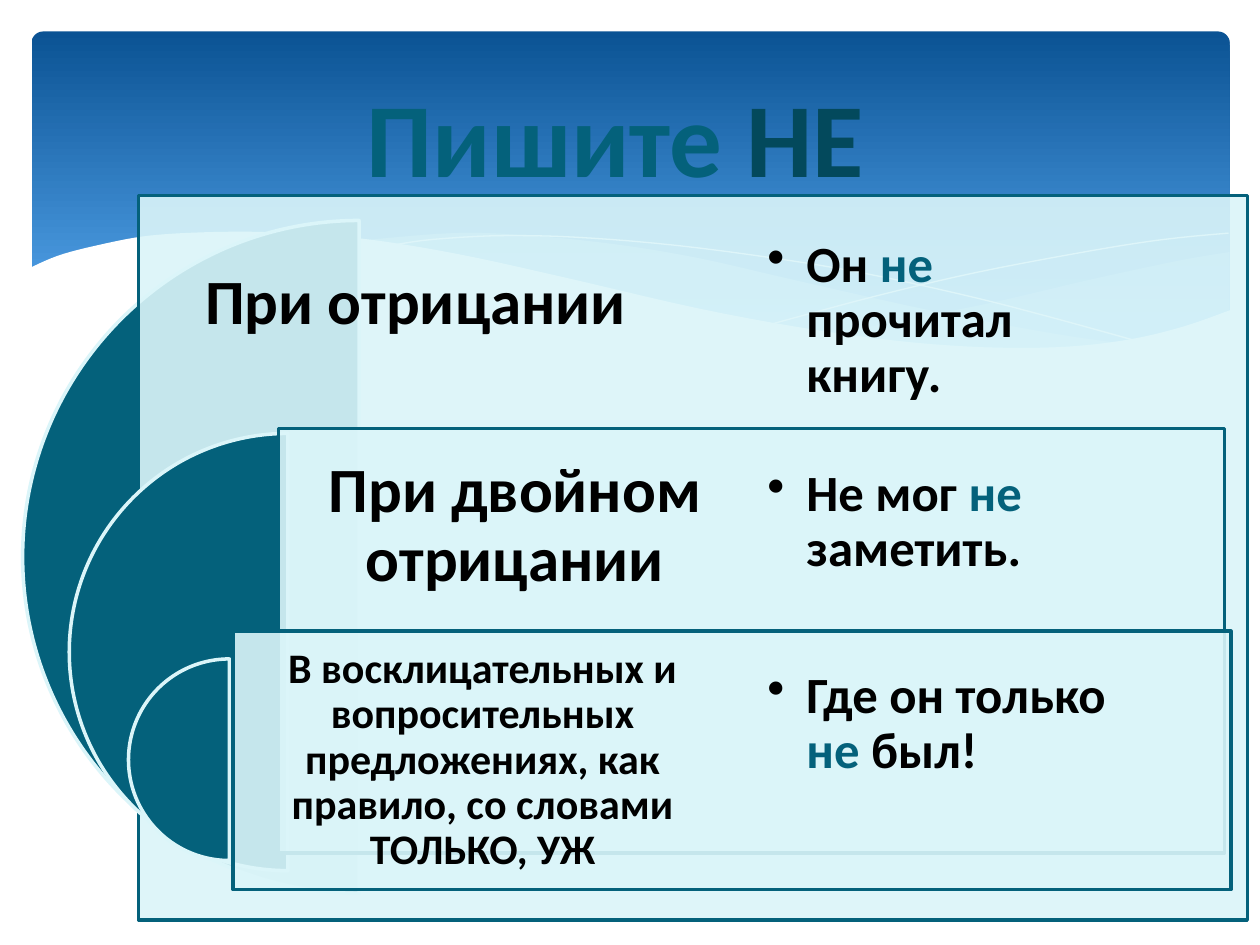
from pptx import Presentation
from pptx.dml.color import RGBColor
from pptx.enum.shapes import MSO_SHAPE
from pptx.enum.text import MSO_ANCHOR, PP_ALIGN
from pptx.oxml.ns import qn
from pptx.util import Inches, Pt
from lxml.etree import SubElement

TEAL = RGBColor(0x04, 0x61, 0x7B)
DARK_TEAL = RGBColor(0x03, 0x49, 0x5C)
PALE = RGBColor(0xDB, 0xF5, 0xF9)
BLACK = RGBColor(0, 0, 0)
WHITE = RGBColor(0xFF, 0xFF, 0xFF)
BANNER_TOP = RGBColor(0x0B, 0x53, 0x94)
BANNER_BOTTOM = RGBColor(0x59, 0xAA, 0xF2)
FONT = "Calibri"

# Content: words as (text, colour) pairs
TITLE = [("Пишите ", TEAL), ("НЕ", DARK_TEAL)]
RULES = [
    {"label": "При отрицании", "size": 36, "inset": 0.15,
     "pie": (0.18, 1.75, 5.34), "panel": (1.1, 1.55, 8.8, 5.75), "label_height": 1.72,
     "example": [("Он", BLACK), (" не ", TEAL), ("прочитал книгу.", BLACK)]},
    {"label": "При двойном отрицании", "size": 36, "inset": 0.15,
     "pie": (0.55, 3.44, 3.47), "panel": (2.21, 3.4, 7.51, 3.37), "label_height": 1.56,
     "example": [("Не мог ", BLACK), ("не", TEAL), (" заметить.", BLACK)]},
    {"label": "В восклицательных и вопросительных предложениях, "
              "как правило, со словами ТОЛЬКО, УЖ", "size": 24, "inset": 0.1,
     "pie": (1.02, 5.23, 1.6), "panel": (1.85, 5.01, 7.92, 2.05), "label_height": 2.05,
     "example": [("Где он только ", BLACK), ("не", TEAL), (" был!", BLACK)]},
]
EXAMPLE_LEFT, EXAMPLE_TOP, EXAMPLE_WIDTH, EXAMPLE_HEIGHT = 5.97, 1.75, 3.11, 1.6
COLUMN_SPLIT = 0.5  # share of a panel's width taken by its label

# Banner waves: each is a list of curves, joined by straight edges
RIGHT_WAVE = [
    [(9.76, 2), (9.35, 2.07), (8.61, 2.23), (7.79, 2.42), (6.61, 2.65)],
    [(6.61, 2.65), (7.19, 2.72), (7.69, 2.77), (8.24, 2.77), (8.72, 2.74),
     (9.21, 2.65), (9.49, 2.57), (9.76, 2.47)],
]
MIDDLE_WAVE = [
    [(8.93, 2.73), (8.37, 2.65), (7.41, 2.47), (6.29, 2.22), (5.55, 2.05),
     (4.89, 1.94), (4.2, 1.87), (3.61, 1.85), (2.86, 1.91)],
    [(2.86, 1.91), (3.62, 2.03), (4.49, 2.22), (5.66, 2.48), (6.5, 2.64),
     (7.22, 2.74), (7.85, 2.78), (8.38, 2.78), (8.93, 2.73)],
]
FRONT_WAVE = [
    [(9.77, 2.46), (9.4, 2.59), (8.99, 2.69), (8.5, 2.75), (7.93, 2.76), (7.26, 2.72),
     (6.48, 2.62), (5.55, 2.45), (4.47, 2.2), (3.65, 2.02), (2.92, 1.9), (2.3, 1.85),
     (1.77, 1.84), (1.19, 1.87), (0.76, 1.95), (0.46, 2.03), (0.23, 2.13)],
    [(0.23, 3.29), (9.77, 3.29)],
]
FALLING_LINE = [[(3.09, 1.95), (3.44, 1.9), (4.01, 1.87), (4.69, 1.89), (5.56, 1.97),
                 (6.65, 2.13), (7.6, 2.33), (8.31, 2.51), (9.07, 2.72)]]
RISING_LINE = [[(6.13, 2.57), (6.95, 2.35), (7.76, 2.16), (8.66, 1.99),
                (9.24, 1.9), (9.75, 1.85)]]


def smooth(points, steps=5):
    """Catmull-Rom curve through the points."""
    padded = [points[0], *points, points[-1]]
    curve = [points[0]]
    for a, b, c, d in zip(padded, padded[1:], padded[2:], padded[3:]):
        for step in range(1, steps + 1):
            t = step / steps
            curve.append(tuple(
                (2 * q + (r - p) * t + (2 * p - 5 * q + 4 * r - s) * t ** 2
                 + (3 * q - p - 3 * r + s) * t ** 3) / 2
                for p, q, r, s in zip(a, b, c, d)))
    return curve


def paint(shape, fill=None, alpha=100, line=None, width=2):
    shape.shadow.inherit = False
    if fill is None:
        shape.fill.background()
    else:
        shape.fill.solid()
        shape.fill.fore_color.rgb = fill
        if alpha < 100:
            colour = shape.fill._xPr.find(qn("a:solidFill"))[0]
            SubElement(colour, qn("a:alpha"), val=str(alpha * 1000))
    if line is None:
        shape.line.fill.background()
    else:
        shape.line.color.rgb = line
        shape.line.width = Pt(width)


def add_wave(page, curves, closed=True, **style):
    points = [(Inches(x), Inches(y)) for curve in curves for x, y in smooth(curve)]
    builder = page.shapes.build_freeform(*points[0])
    builder.add_line_segments(points[1:], close=closed)
    paint(builder.convert_to_shape(), **style)


def add_text(page, place, words, size, inset, align=PP_ALIGN.CENTER, spacing=0.9,
             anchor=MSO_ANCHOR.MIDDLE):
    frame = page.shapes.add_textbox(*map(Inches, place)).text_frame
    frame.word_wrap = True
    frame.vertical_anchor = anchor
    frame.margin_left = frame.margin_right = Inches(inset)
    frame.margin_top = frame.margin_bottom = Inches(inset)
    para = frame.paragraphs[0]
    para.alignment = align
    para.line_spacing = spacing
    for text, colour in words:
        span = para.add_run()
        span.text = text
        span.font.name = FONT
        span.font.size = Pt(size)
        span.font.bold = True
        span.font.color.rgb = colour
    return para


def add_bullet(para, indent):
    properties = para._p.get_or_add_pPr()
    properties.set("marL", str(Inches(indent)))
    properties.set("indent", str(-Inches(indent)))
    SubElement(properties, qn("a:buChar"), char="•")


def add_banner(page):
    banner = page.shapes.add_shape(MSO_SHAPE.ROUNDED_RECTANGLE,
                                   *map(Inches, (0.25, 0.25, 9.51, 2.7)))
    banner.adjustments[0] = 0.034
    paint(banner)
    banner.fill.gradient()
    banner.fill.gradient_angle = 270
    for stop, position, colour in zip(banner.fill.gradient_stops, (0, 0.9),
                                      (BANNER_TOP, BANNER_BOTTOM)):
        stop.position = position
        stop.color.rgb = colour
    add_wave(page, RIGHT_WAVE, fill=PALE, alpha=29)
    add_wave(page, MIDDLE_WAVE, fill=PALE, alpha=40)
    for curves in (FALLING_LINE, RISING_LINE):
        add_wave(page, curves, closed=False, line=WHITE, width=0)
    add_wave(page, FRONT_WAVE, fill=WHITE)


def add_rule(page, rule):
    left, top, diameter = rule["pie"]
    pie = page.shapes.add_shape(MSO_SHAPE.PIE, *map(Inches, (left, top, diameter, diameter)))
    pie.adjustments[0], pie.adjustments[1] = 54, 162  # left half: 90° to 270°
    paint(pie, fill=TEAL, line=PALE)
    panel = page.shapes.add_shape(MSO_SHAPE.RECTANGLE, *map(Inches, rule["panel"]))
    paint(panel, fill=PALE, alpha=90, line=TEAL)
    left, top, width, _ = rule["panel"]
    add_text(page, (left, top, width * COLUMN_SPLIT, rule["label_height"]),
             [(rule["label"], BLACK)], rule["size"], rule["inset"])


def main():
    deck = Presentation()
    deck.slide_width, deck.slide_height = Inches(10), Inches(7.5)
    page = deck.slides.add_slide(deck.slide_layouts[6])
    add_banner(page)
    for rule in RULES:
        add_rule(page, rule)
    # Examples stacked in one column
    for row, rule in enumerate(RULES):
        place = (EXAMPLE_LEFT, EXAMPLE_TOP + row * EXAMPLE_HEIGHT,
                 EXAMPLE_WIDTH, EXAMPLE_HEIGHT)
        para = add_text(page, place, rule["example"], 29, 0.12, PP_ALIGN.LEFT)
        add_bullet(para, 0.31)
    add_text(page, (2.17, 0.37, 5.43, 1.41), TITLE, 60, 0.1, spacing=1.0)
    deck.save("out.pptx")


if __name__ == "__main__":
    main()
